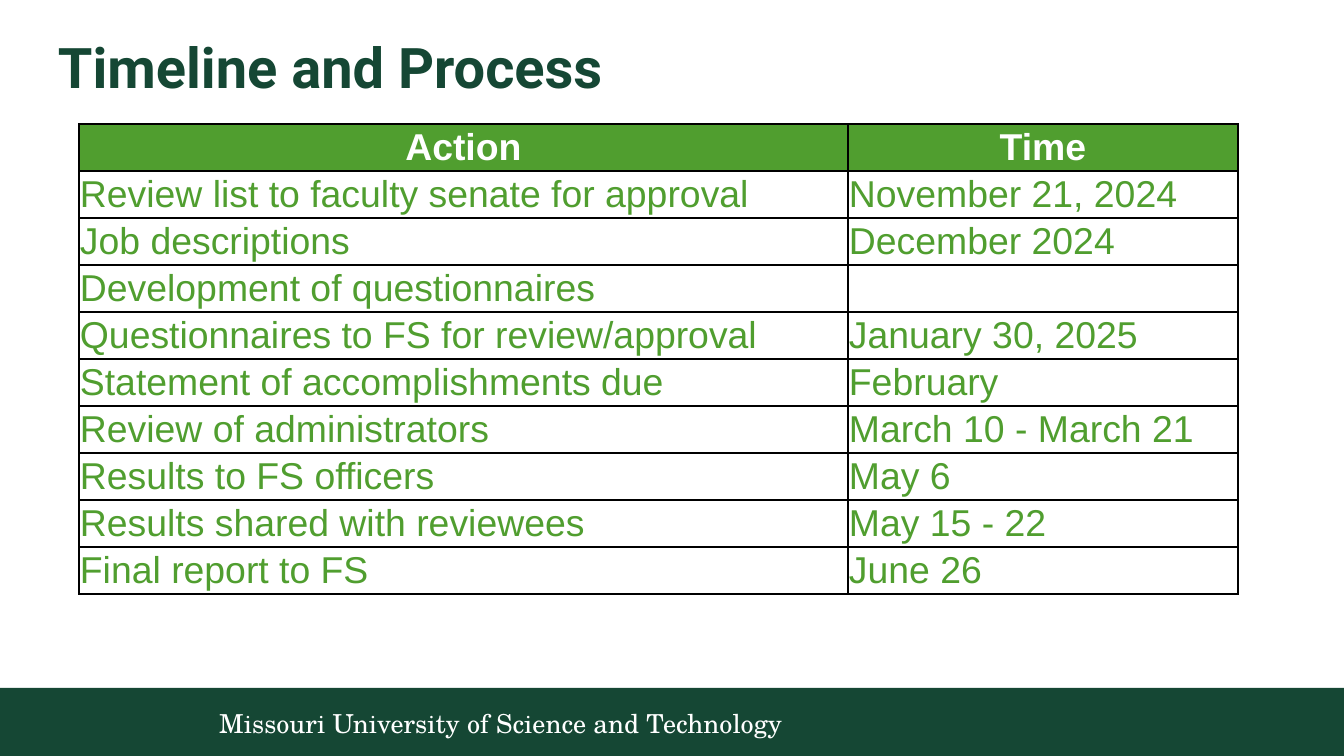
from lxml import etree
from pptx import Presentation
from pptx.dml.color import RGBColor
from pptx.enum.shapes import MSO_SHAPE
from pptx.enum.text import MSO_ANCHOR, MSO_AUTO_SIZE, PP_ALIGN
from pptx.oxml.ns import qn
from pptx.util import Emu, Pt

RECTANGLE = MSO_SHAPE.RECTANGLE
TOP, MIDDLE = MSO_ANCHOR.TOP, MSO_ANCHOR.MIDDLE
LEFT, CENTER = PP_ALIGN.LEFT, PP_ALIGN.CENTER
NO_AUTOFIT = MSO_AUTO_SIZE.NONE

PX_PER_INCH = 134.4
DARK_GREEN, GREEN, WHITE, BLACK = "154734", "509E2F", "FFFFFF", "000000"

HEADINGS = ("Action", "Time")
TIMELINE = [
    ("Review list to faculty senate for approval", "November 21, 2024"),
    ("Job descriptions", "December 2024"),
    ("Development of questionnaires", ""),
    ("Questionnaires to FS for review/approval", "January 30, 2025"),
    ("Statement of accomplishments due", "February"),
    ("Review of administrators", "March 10 - March 21"),
    ("Results to FS officers", "May 6"),
    ("Results shared with reviewees", "May 15 - 22"),
    ("Final report to FS", "June 26"),
]
COLUMN_WIDTHS = (769, 390)
ROW_HEIGHT = 47


def px(length):
    return Emu(round(length * 914400 / PX_PER_INCH))


def color(hex_code):
    return RGBColor.from_string(hex_code)


def style_paragraph(paragraph, font_name, size, hex_code, bold=False, align=LEFT):
    paragraph.alignment = align
    font = paragraph.font
    font.name, font.size, font.bold = font_name, Pt(size), bold
    font.color.rgb = color(hex_code)


def add_title(slide, text):
    title = slide.shapes.title
    title.left, title.top, title.width, title.height = px(58), px(40), px(1228), px(59)
    frame = title.text_frame
    frame.text = text
    frame.auto_size = NO_AUTOFIT
    frame.vertical_anchor = TOP
    frame.margin_left = frame.margin_right = frame.margin_top = frame.margin_bottom = 0
    heading = frame.paragraphs[0]
    heading.line_spacing = 0.9
    style_paragraph(heading, "Roboto", 30, DARK_GREEN, bold=True)


def add_footer(slide, text):
    band = slide.shapes.add_shape(RECTANGLE, px(-5), px(688), px(1349), px(68))
    band.shadow.inherit = False
    band.fill.solid()
    band.fill.fore_color.rgb = color(DARK_GREEN)
    band.line.fill.background()

    university = slide.shapes.add_textbox(px(206), px(696), px(853), px(54))
    frame = university.text_frame
    frame.word_wrap = True
    frame.vertical_anchor = MIDDLE
    frame.text = text
    style_paragraph(frame.paragraphs[0], "TeX Gyre Schola", 14, WHITE)


def add_borders(cell, hex_code, width):
    properties = cell._tc.get_or_add_tcPr()
    for side in ("a:lnL", "a:lnR", "a:lnT", "a:lnB"):
        line = etree.SubElement(properties, qn(side), w=str(Pt(width)))
        fill = etree.SubElement(line, qn("a:solidFill"))
        etree.SubElement(fill, qn("a:srgbClr"), val=hex_code)


def fill_cell(cell, text, is_heading):
    cell.text = text
    cell.vertical_anchor = MIDDLE
    cell.margin_left = cell.margin_right = cell.margin_top = px(1)
    cell.margin_bottom = 0
    add_borders(cell, BLACK, 1)
    paragraph = cell.text_frame.paragraphs[0]
    if is_heading:
        cell.fill.solid()
        cell.fill.fore_color.rgb = color(GREEN)
        style_paragraph(paragraph, "Arial", 20, WHITE, bold=True, align=CENTER)
    else:
        cell.fill.background()
        style_paragraph(paragraph, "Arial", 20, GREEN)


def add_timeline(slide):
    rows = [HEADINGS, *TIMELINE]
    frame = slide.shapes.add_table(
        len(rows), len(HEADINGS), px(79), px(124),
        px(sum(COLUMN_WIDTHS)), px(ROW_HEIGHT * len(rows)))
    table = frame.table
    table.first_row = table.horz_banding = False
    for column, width in zip(table.columns, COLUMN_WIDTHS):
        column.width = px(width)
    for row_index, row in enumerate(rows):
        table.rows[row_index].height = px(ROW_HEIGHT)
        for column_index, text in enumerate(row):
            fill_cell(table.cell(row_index, column_index), text, row_index == 0)


def main():
    presentation = Presentation()
    presentation.slide_width, presentation.slide_height = px(1344), px(756)
    slide = presentation.slides.add_slide(presentation.slide_layouts[5])

    # Footer band with the university name
    add_footer(slide, "Missouri University of Science and Technology")

    # Title and schedule
    add_title(slide, "Timeline and Process")
    add_timeline(slide)

    presentation.save("out.pptx")


if __name__ == "__main__":
    main()
